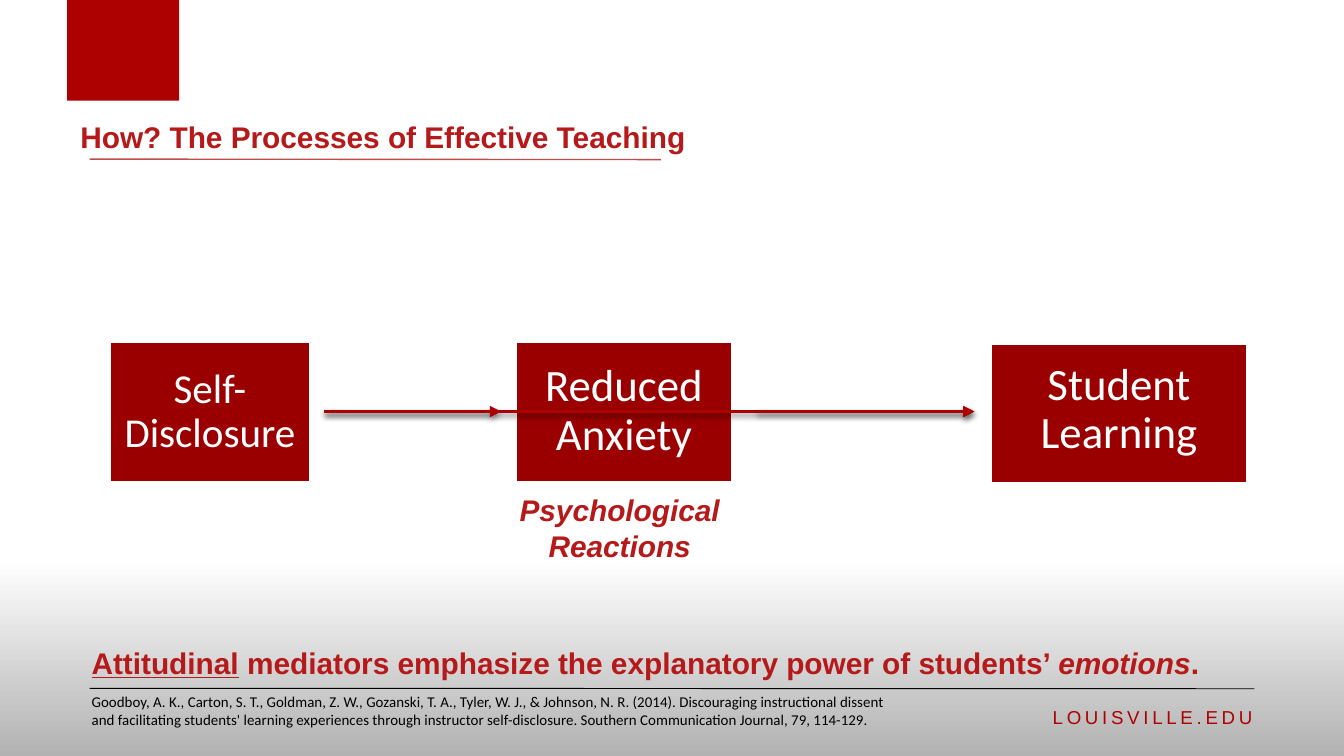
from dataclasses import dataclass

import lxml.etree
import pptx
import pptx.dml.color
import pptx.enum.shapes
import pptx.enum.text
import pptx.oxml.ns
import pptx.shapes.connector
import pptx.slide
import pptx.text.text
import pptx.util

Pt = pptx.util.Pt
RGBColor = pptx.dml.color.RGBColor
Align = pptx.enum.text.PP_ALIGN
Anchor = pptx.enum.text.MSO_ANCHOR
qn = pptx.oxml.ns.qn

WHITE = RGBColor(0xFF, 0xFF, 0xFF)
BLACK = RGBColor(0, 0, 0)
GREY = RGBColor(0xB2, 0xB2, 0xB2)
RED = RGBColor(0xAD, 0, 0)
TEXT_RED = RGBColor(0xB5, 0x19, 0x1A)
BOX_RED = RGBColor(0x9B, 0, 0)
RULE_RED = RGBColor(0xBF, 0x4C, 0x48)
ARROW_Y = 220.5


@dataclass(frozen=True)
class Run:
    text: str
    size: float = 16
    color: RGBColor = TEXT_RED
    font: str = "Arial"
    bold: bool = True
    italic: bool = False
    underline: bool = False
    spacing: float = 0


@dataclass(frozen=True)
class Area:
    left: float
    top: float
    width: float
    height: float

    def lengths(self) -> tuple:
        return Pt(self.left), Pt(self.top), Pt(self.width), Pt(self.height)


@dataclass(frozen=True)
class Stage:
    area: Area
    label: str
    size: float = 24
    inset: float = 6.6
    lift: float = 0


STAGES = [
    Stage(Area(58.5, 183, 108, 75.5), "Self-Disclosure", size=22, inset=4.5),
    Stage(Area(530.5, 184, 138, 75.5), "Student Learning", lift=2),
    Stage(Area(276, 182.5, 116.5, 76), "Reduced Anxiety"),
]
ARROWS = [(174, 522), (173.5, 268.5), (405.5, 522)]


def add_run(paragraph: pptx.text.text._Paragraph, content: Run) -> None:
    run = paragraph.add_run()
    run.text = content.text
    font = run.font
    font.name, font.size = content.font, Pt(content.size)
    font.bold, font.italic = content.bold, content.italic
    font.underline = content.underline
    font.color.rgb = content.color
    if content.spacing:
        run._r.get_or_add_rPr().set("spc", str(round(content.spacing * 100)))


def add_text(slide: pptx.slide.Slide, area: Area, paragraphs: list[list[Run]],
             align: Align = Align.LEFT, anchor: Anchor = Anchor.TOP, wrap: bool = True) -> None:
    frame = slide.shapes.add_textbox(*area.lengths()).text_frame
    frame.word_wrap = wrap
    frame.vertical_anchor = anchor
    for index, runs in enumerate(paragraphs):
        paragraph = frame.add_paragraph() if index else frame.paragraphs[0]
        paragraph.alignment = align
        for run in runs:
            add_run(paragraph, run)


def add_rectangle(slide: pptx.slide.Slide, area: Area, color: RGBColor):
    shape = slide.shapes.add_shape(pptx.enum.shapes.MSO_SHAPE.RECTANGLE, *area.lengths())
    shape.shadow.inherit = False
    shape.fill.solid()
    shape.fill.fore_color.rgb = color
    shape.line.fill.background()
    return shape


def add_stage(slide: pptx.slide.Slide, stage: Stage) -> None:
    shape = add_rectangle(slide, stage.area, BOX_RED)
    shape.line.color.rgb = WHITE
    shape.line.width = Pt(2)
    frame = shape.text_frame
    frame.word_wrap = True
    frame.vertical_anchor = Anchor.MIDDLE
    frame.margin_left = frame.margin_right = frame.margin_top = Pt(stage.inset)
    frame.margin_bottom = Pt(stage.inset + 2 * stage.lift)
    paragraph = frame.paragraphs[0]
    paragraph.alignment = Align.CENTER
    paragraph.line_spacing = 0.9
    add_run(paragraph, Run(stage.label, stage.size, WHITE, "Calibri", bold=False))


def add_line(slide: pptx.slide.Slide, start: tuple[float, float], end: tuple[float, float],
             color: RGBColor, width: float) -> pptx.shapes.connector.Connector:
    line = slide.shapes.add_connector(
        pptx.enum.shapes.MSO_CONNECTOR.STRAIGHT, *(Pt(value) for value in start + end))
    line.line.color.rgb = color
    line.line.width = Pt(width)
    lxml.etree.SubElement(line._element.spPr, qn("a:effectLst"))
    return line


def add_arrow(slide: pptx.slide.Slide, start: float, end: float) -> None:
    """Draw a horizontal arrow with a soft shadow below it."""
    arrow = add_line(slide, (start, ARROW_Y), (end, ARROW_Y), RED, 2)
    properties = arrow._element.spPr
    lxml.etree.SubElement(properties.find(qn("a:ln")), qn("a:tailEnd"), type="triangle")
    shadow = lxml.etree.SubElement(
        properties.find(qn("a:effectLst")), qn("a:outerShdw"), blurRad=str(Pt(3.1)),
        dist=str(Pt(1.6)), dir="5400000", rotWithShape="0")
    color = lxml.etree.SubElement(shadow, qn("a:srgbClr"), val=str(BLACK))
    lxml.etree.SubElement(color, qn("a:alpha"), val="38000")


def set_background(slide: pptx.slide.Slide) -> None:
    fill = slide.background.fill
    fill.gradient()
    fill.gradient_angle = 270
    for stop, (position, color) in zip(fill.gradient_stops, [(0.74, WHITE), (1, GREY)]):
        stop.position = position
        stop.color.rgb = color


def main() -> None:
    presentation = pptx.Presentation()
    presentation.slide_width, presentation.slide_height = Pt(720), Pt(405)
    slide = presentation.slides.add_slide(presentation.slide_layouts[6])
    set_background(slide)

    add_line(slide, (672, 369), (48, 368.75), BLACK, 0.5)
    add_text(slide, Area(522, 374.5, 156, 21.5),
             [[Run("LOUISVILLE.EDU", 10, RED, bold=False, spacing=2)]], Align.RIGHT)
    add_rectangle(slide, Area(36, 0, 60, 54), RED)
    add_line(slide, (354, 85.5), (48, 85.25), RULE_RED, 0.75)

    add_text(slide, Area(42, 340.5, 612, 27.5), [[
        Run("Attitudinal", underline=True),
        Run(" mediators emphasize the explanatory power of students’ "),
        Run("emotions", italic=True),
        Run("."),
    ]], anchor=Anchor.BOTTOM)
    add_text(slide, Area(36, 59, 342, 27.5),
             [[Run("How? The Processes of Effective Teaching")]], anchor=Anchor.BOTTOM)

    for stage in STAGES:
        add_stage(slide, stage)
    for start, end in ARROWS:
        add_arrow(slide, start, end)

    add_text(slide, Area(270.5, 260, 123, 46),
             [[Run(word, italic=True)] for word in ("Psychological", "Reactions")],
             Align.CENTER, wrap=False)
    add_text(slide, Area(42, 367.5, 444, 36), [[Run(
        "Goodboy, A. K., Carton, S. T., Goldman, Z. W., Gozanski, T. A., Tyler, W. J., "
        "& Johnson, N. R. (2014). Discouraging instructional dissent and facilitating "
        "students' learning experiences through instructor self-disclosure. "
        "Southern Communication Journal, 79, 114-129.",
        8, BLACK, "Calibri", bold=False)]])

    presentation.save("out.pptx")


if __name__ == "__main__":
    main()
